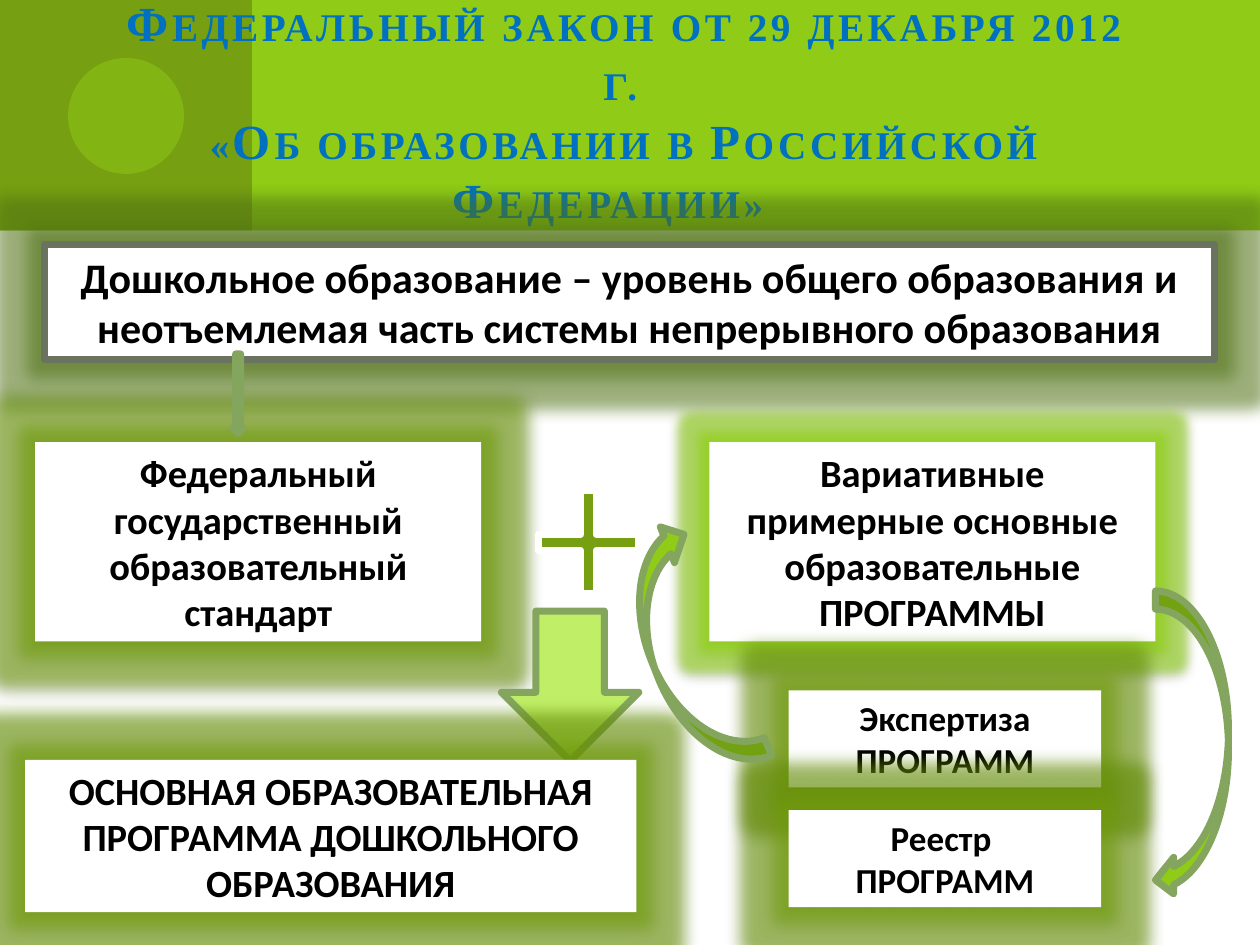
"""Build a slide on preschool education in the federal law."""
from lxml import etree
from pptx import Presentation
from pptx.dml.color import RGBColor
from pptx.enum.shapes import MSO_SHAPE
from pptx.enum.text import MSO_ANCHOR, MSO_AUTO_SIZE, PP_ALIGN
from pptx.oxml.ns import qn
from pptx.util import Inches, Pt

RECTANGLE, OVAL = MSO_SHAPE.RECTANGLE, MSO_SHAPE.OVAL
DOWN_ARROW, CURVED_ARROW = MSO_SHAPE.DOWN_ARROW, MSO_SHAPE.CURVED_LEFT_ARROW
PLUS = MSO_SHAPE.MATH_PLUS
CENTER, MIDDLE = PP_ALIGN.CENTER, MSO_ANCHOR.MIDDLE
FIT_SHAPE = MSO_AUTO_SIZE.SHAPE_TO_FIT_TEXT

GREEN = RGBColor(0x8F, 0xCB, 0x17)
DARK_GREEN = RGBColor(0x76, 0x9F, 0x11)
LIGHT_GREEN = RGBColor(0xC0, 0xEE, 0x66)
ARROW_EDGE = RGBColor(0x84, 0xA5, 0x5E)
FRAME_GRAY = RGBColor(0x69, 0x73, 0x5F)
GLOW_OLIVE = RGBColor(0x4E, 0x70, 0x12)
GLOW_GREEN = RGBColor(0x70, 0x9E, 0x05)
GLOW_LIME = RGBColor(0x8F, 0xD6, 0x0A)
BLUE = RGBColor(0x00, 0x70, 0xC0)
BLACK = RGBColor(0, 0, 0)
WHITE = RGBColor(0xFF, 0xFF, 0xFF)


def add_figure(page, kind, place, fill, line=None):
    """Add a filled preset shape with an optional 4 pt outline."""
    figure = page.shapes.add_shape(kind, *map(Inches, place))
    figure.shadow.inherit = False
    figure.fill.solid()
    figure.fill.fore_color.rgb = fill
    if line is None:
        figure.line.fill.background()
    else:
        figure.line.color.rgb = line
        figure.line.width = Pt(4)
    return figure


def add_color(parent, color, opacity):
    """Add a partly transparent colour to an XML element."""
    node = etree.SubElement(parent, qn("a:srgbClr"), val=str(color))
    etree.SubElement(node, qn("a:alpha"), val=str(opacity * 1000))


def add_effects(box, glow, radius, shadow):
    """Give a box a glow and, if asked, a soft shadow."""
    effects = box._element.spPr.find(qn("a:effectLst"))
    halo = etree.SubElement(effects, qn("a:glow"), rad=str(Pt(radius)))
    add_color(halo, glow, 55)
    if shadow:
        shade = etree.SubElement(
            effects, qn("a:outerShdw"), blurRad=str(Pt(3.5)),
            dist=str(Pt(2.2)), dir="5400000", rotWithShape="0")
        add_color(shade, BLACK, 32)


def write(shape, text, size, font, color):
    """Write bold centred text into a shape."""
    frame = shape.text_frame
    frame.text = text
    frame.word_wrap = True
    frame.vertical_anchor = MIDDLE
    for para in frame.paragraphs:
        para.alignment = CENTER
        for span in para.runs:
            span.font.size = Pt(size)
            span.font.name = font
            span.font.bold = True
            span.font.color.rgb = color


def add_box(page, place, text, size, glow=GLOW_GREEN, radius=18, line=None):
    """Add a white glowing box with text."""
    box = add_figure(page, RECTANGLE, place, WHITE, line)
    add_effects(box, glow, radius, shadow=line is None)
    write(box, text, size, "Calibri", BLACK)
    box.text_frame.auto_size = FIT_SHAPE


def add_header(page):
    """Add the green band and the title."""
    add_figure(page, RECTANGLE, (0, 0, 10, 1.83), GREEN)
    add_figure(page, RECTANGLE, (0, 0, 2, 1.83), DARK_GREEN)
    disc = add_figure(page, OVAL, (0.54, 0.46, 0.92, 0.92), GREEN)
    color = disc._element.spPr.find(qn("a:solidFill"))[0]
    etree.SubElement(color, qn("a:alpha"), val="50000")

    title = page.shapes.add_textbox(*map(Inches, (0.43, 0.25, 9.07, 1.25)))
    write(title, "Федеральный закон от 29 декабря 2012 г.\v"
          "«Об образовании в Российской Федерации»",
          28, "Times New Roman", BLUE)
    for span in title.text_frame.paragraphs[0].runs:
        properties = span.font._element
        properties.set("cap", "small")
        properties.set("spc", "200")


def add_return_arrow(page):
    """Add the curved arrow leading from the review back to the programmes."""
    arrow = add_figure(page, CURVED_ARROW, (5.16, 4.14, 0.61, 2.04),
                       GREEN, ARROW_EDGE)
    arrow.rotation = 338.4
    for flip in ("flipH", "flipV"):
        arrow._element.spPr.xfrm.set(flip, "1")


def main():
    """Build and save the deck."""
    deck = Presentation()
    deck.slide_width, deck.slide_height = Inches(10), Inches(7.5)
    page = deck.slides.add_slide(deck.slide_layouts[6])
    add_header(page)
    add_box(page, (0.35, 1.94, 9.29, 0.91),
            "Дошкольное образование – уровень общего образования и "
            "неотъемлемая часть системы непрерывного образования",
            24, glow=GLOW_OLIVE, line=FRAME_GRAY)
    add_box(page, (0.28, 3.51, 3.54, 1.58),
            "Федеральный государственный образовательный стандарт", 22)
    plus = add_figure(page, PLUS, (4.13, 3.75, 1.08, 1.11), DARK_GREEN, WHITE)
    plus.adjustments[0] = 0.115
    add_figure(page, DOWN_ARROW, (3.98, 4.85, 1.09, 1.19),
               LIGHT_GREEN, ARROW_EDGE)
    add_box(page, (0.2, 6.03, 4.85, 1.21),
            "ОСНОВНАЯ ОБРАЗОВАТЕЛЬНАЯ ПРОГРАММА ДОШКОЛЬНОГО ОБРАЗОВАНИЯ", 22)
    add_box(page, (5.63, 3.51, 3.54, 1.58),
            "Вариативные примерные основные образовательные ПРОГРАММЫ",
            22, glow=GLOW_LIME, radius=12)
    add_box(page, (6.26, 5.48, 2.48, 0.77), "Экспертиза ПРОГРАММ", 20)
    add_box(page, (6.26, 6.43, 2.48, 0.77), "Реестр \nПРОГРАММ", 20)
    add_return_arrow(page)
    add_figure(page, CURVED_ARROW, (9.17, 4.69, 0.58, 2.44), GREEN, ARROW_EDGE)
    add_figure(page, DOWN_ARROW, (1.85, 2.81, 0.08, 0.63), GREEN, ARROW_EDGE)
    deck.save("out.pptx")


if __name__ == "__main__":
    main()
